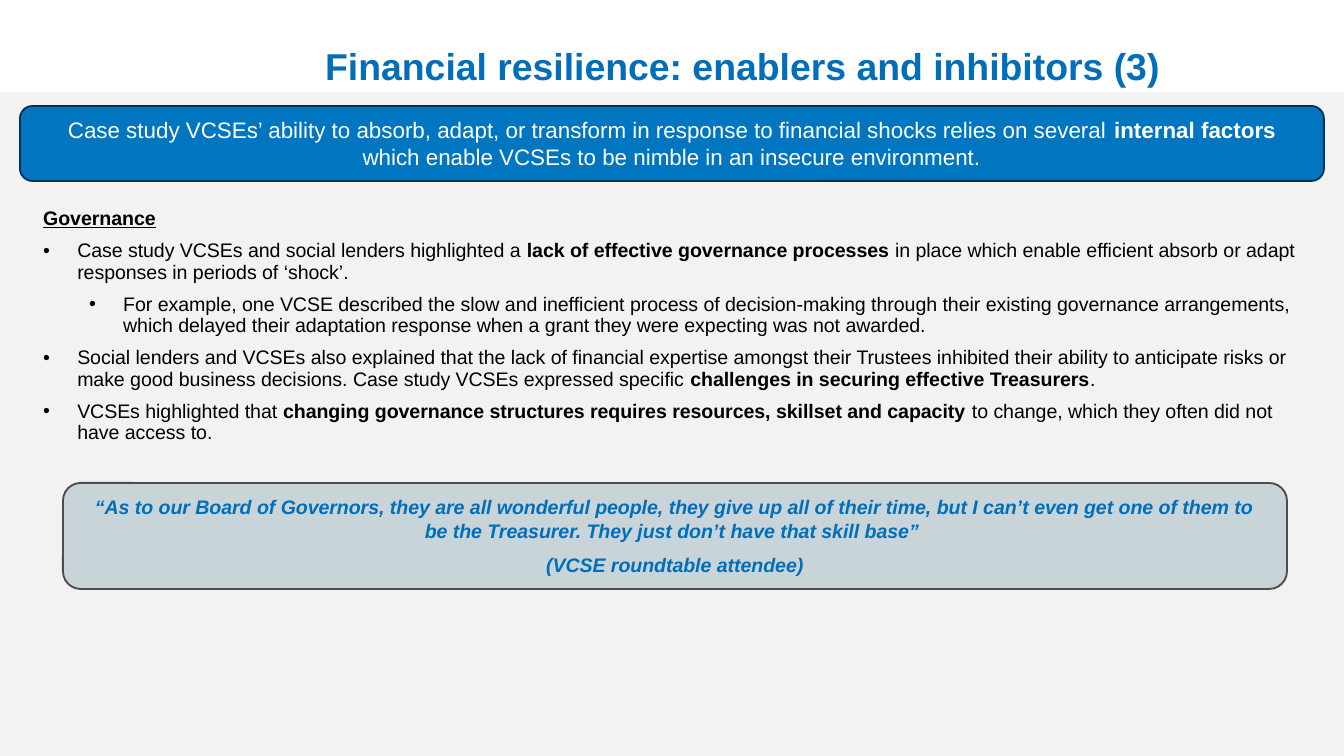
"""Build the slide on governance as a factor in financial resilience."""
from lxml.etree import SubElement
from pptx import Presentation
from pptx.dml.color import RGBColor
from pptx.enum.shapes import MSO_SHAPE as Shape
from pptx.enum.text import MSO_ANCHOR as Anchor, PP_ALIGN as Align
from pptx.oxml.ns import qn
from pptx.util import Pt

EMU_PER_PX = 914400 / 134.4
COLORS = {
    "backdrop": "F2F2F2", "heading": "006EB8", "banner": "0076C0",
    "banner_edge": "003454", "quote": "C9D4D9", "quote_edge": "4C4C4C",
    "white": "FFFFFF", "black": "000000",
}


def px(*lengths):
    return [round(length * EMU_PER_PX) for length in lengths]


def add_spans(para, spans, size, color, italic=False):
    for text, bold in spans:
        span = para.add_run()
        span.text = text
        font = span.font
        font.name, font.size = "Arial", Pt(size)
        font.bold, font.italic = bold, italic
        font.color.rgb = RGBColor.from_string(COLORS[color])


deck = Presentation()
deck.slide_width, deck.slide_height = px(1344, 756)
page = deck.slides.add_slide(deck.slide_layouts[6])

panels = {}
for name, kind, bounds, edge in [
    ("backdrop", Shape.RECTANGLE, (0, 92, 1344, 664), None),
    ("banner", Shape.ROUNDED_RECTANGLE, (20, 106, 1304, 75), "banner_edge"),
    ("quote", Shape.ROUNDED_RECTANGLE, (63, 483, 1224, 106), "quote_edge"),
]:
    box = page.shapes.add_shape(kind, *px(*bounds))
    box.shadow.inherit = False
    box.fill.solid()
    box.fill.fore_color.rgb = RGBColor.from_string(COLORS[name])
    if edge:
        box.line.color.rgb = RGBColor.from_string(COLORS[edge])
        box.line.width = Pt(1)
    else:
        box.line.fill.background()
    panels[name] = box.text_frame

title = page.shapes.add_textbox(*px(312, 8, 1032, 121)).text_frame
title.word_wrap = True
title.vertical_anchor = Anchor.MIDDLE
title.paragraphs[0].line_spacing = 0.9
add_spans(title.paragraphs[0],
          [("Financial resilience: enablers and inhibitors (3)", True)], 20, "heading")

banner = panels["banner"].paragraphs[0]
banner.alignment = Align.CENTER
add_spans(banner, [
    ("Case study VCSEs’ ability to absorb, adapt, or transform in response to "
     "financial shocks relies on several ", False),
    ("internal factors ", True),
    ("which enable VCSEs to be nimble in an insecure environment.", False),
], 12, "white")

body = page.shapes.add_textbox(*px(30, 202, 1294, 521)).text_frame
body.word_wrap = True
heading = body.paragraphs[0]
heading.line_spacing = 0.9
add_spans(heading, [("Governance", True)], 10.5, "black")
heading.runs[0].font.underline = True

points = [
    (0, [("Case study VCSEs and social lenders highlighted a ", False),
         ("lack of effective governance processes ", True),
         ("in place which enable efficient absorb or adapt responses in periods "
          "of ‘shock’.", False)]),
    (1, [("For example, one VCSE described the slow and inefficient process of "
          "decision-making through their existing governance arrangements, which "
          "delayed their adaptation response when a grant they were expecting was "
          "not awarded.", False)]),
    (0, [("Social lenders and VCSEs also explained that the lack of financial "
          "expertise amongst their Trustees inhibited their ability to anticipate "
          "risks or make good business decisions. Case study VCSEs expressed "
          "specific ", False),
         ("challenges in securing effective Treasurers", True),
         (".", False)]),
    (0, [("VCSEs highlighted that ", False),
         ("changing governance structures requires resources, skillset and "
          "capacity ", True),
         ("to change, which they often did not have access to.", False)]),
]
for level, spans in points:
    para = body.add_paragraph()
    para.level = level
    para.line_spacing = 0.9
    para.space_before = Pt(6)
    margin, hanging = px(34 + 46 * level, -34)
    properties = para._p.get_or_add_pPr()
    properties.set("marL", str(margin))
    properties.set("indent", str(hanging))
    SubElement(properties, qn("a:buFont")).set("typeface", "Arial")
    SubElement(properties, qn("a:buChar")).set("char", "•")
    add_spans(para, spans, 10.5, "black")

quote = panels["quote"]
for para, text in [
    (quote.paragraphs[0],
     "“As to our Board of Governors, they are all wonderful people, they give up "
     "all of their time, but I can’t even get one of them to be the Treasurer. "
     "They just don’t have that skill base” "),
    (quote.add_paragraph(), "(VCSE roundtable attendee)"),
]:
    para.alignment = Align.CENTER
    para.space_after = Pt(6)
    add_spans(para, [(text, True)], 10.5, "heading", italic=True)

deck.save("out.pptx")
